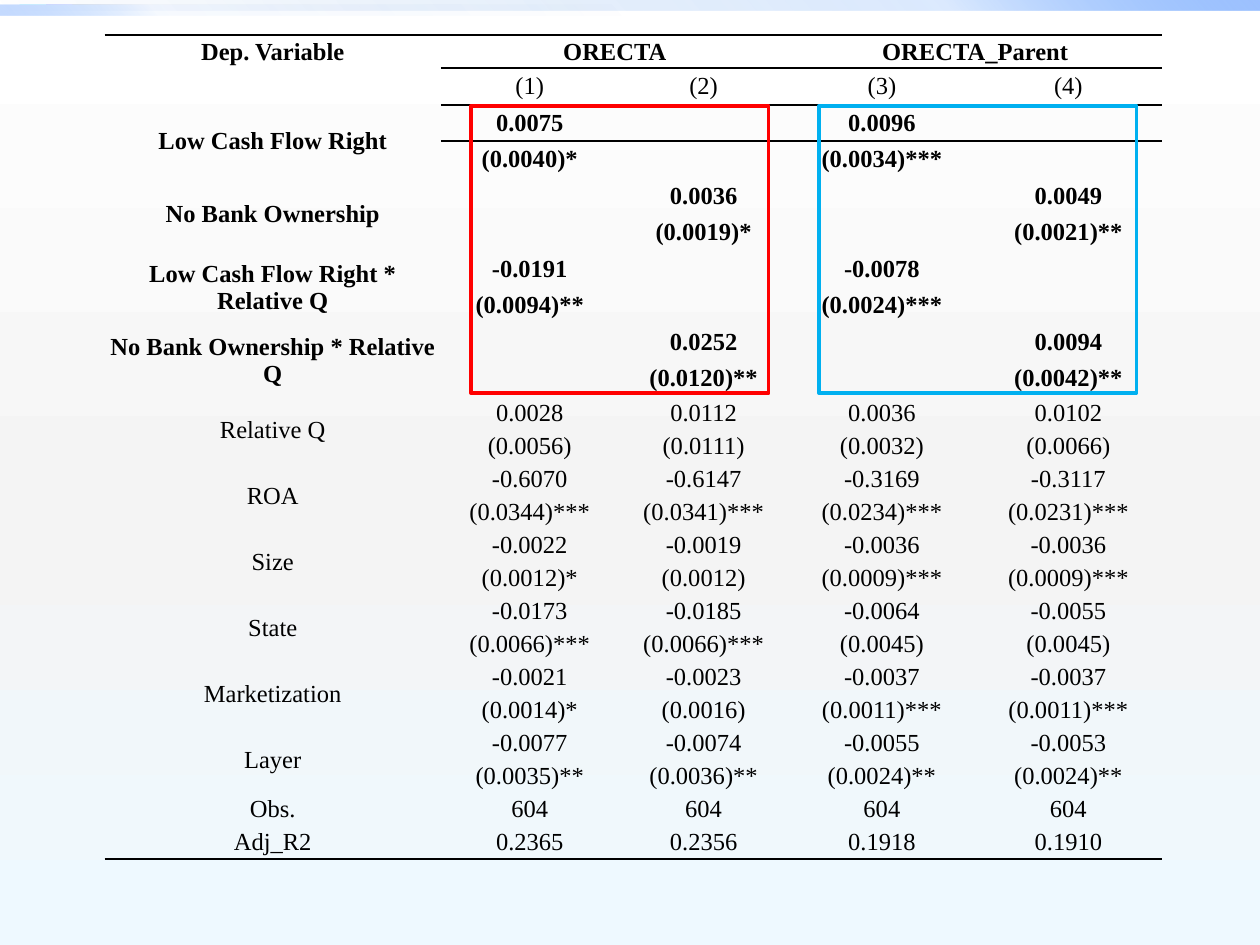
from dataclasses import dataclass

import lxml.etree
import pptx
import pptx.dml.color
import pptx.enum.shapes
import pptx.enum.text
import pptx.oxml.ns
import pptx.slide
import pptx.table
import pptx.util

RGBColor = pptx.dml.color.RGBColor
BLACK = RGBColor(0x00, 0x00, 0x00)
RED = RGBColor(0xFF, 0x00, 0x00)
SKY = RGBColor(0x00, 0xB0, 0xF0)
WHITE = RGBColor(0xFF, 0xFF, 0xFF)
GREY = RGBColor(0xF4, 0xF4, 0xF4)
ICE = RGBColor(0xEE, 0xF9, 0xFF)
DEEP_BLUE = RGBColor(0x00, 0x58, 0xB7)
MID_BLUE = RGBColor(0x4F, 0x95, 0xFF)
PALE_BLUE = RGBColor(0x9E, 0xC2, 0xFF)

FONT = "Times New Roman"
FONT_POINTS = 14
RULE_POINTS = 1.5
FRAME_POINTS = 2.25
NO_STYLE = "{2D5ABB26-0587-4C30-8999-92F81FD0307C}"

# The slide is a grid of 100 columns by 75 rows, ten to the inch.
SLIDE_COLUMNS, SLIDE_ROWS = 100, 75
TABLE_LEFT, TABLE_TOP = 8.3, 2.8
COLUMN_WIDTHS = (26.7, 14.1, 13.5, 14.8, 14.8)
ROW, TALL_ROW = 2.62, 2.9


@dataclass(frozen=True)
class Area:
    left: float
    top: float
    width: float
    height: float


@dataclass(frozen=True)
class Stop:
    percent: int
    color: RGBColor
    opacity: int = 100


@dataclass(frozen=True)
class Effect:
    """One regressor: estimates and standard errors for models (1) to (4)."""
    label: str
    estimates: tuple[str, ...]
    errors: tuple[str, ...]
    bold: bool = False


BACKDROP = (Stop(0, WHITE), Stop(55, GREY), Stop(100, ICE))
BARS = (
    (Area(0, 0, 100, 0.8), 315,
     (Stop(0, DEEP_BLUE, 0), Stop(75, MID_BLUE, 20), Stop(100, PALE_BLUE))),
    (Area(0, 0.4, 50, 0.8), 135,
     (Stop(0, DEEP_BLUE, 0), Stop(75, MID_BLUE, 5), Stop(100, PALE_BLUE, 60))),
)
FRAMES = ((Area(37.4, 8.4, 23.6, 22.8), RED), (Area(65, 8.4, 25.2, 22.8), SKY))

GROUPS = {1: "ORECTA", 3: "ORECTA_Parent"}
MODELS = ("(1)", "(2)", "(3)", "(4)")
EFFECTS = (
    Effect("Low Cash Flow Right", ("0.0075", "", "0.0096", ""),
           ("(0.0040)*", "", "(0.0034)***", ""), True),
    Effect("No Bank Ownership", ("", "0.0036", "", "0.0049"),
           ("", "(0.0019)*", "", "(0.0021)**"), True),
    Effect("Low Cash Flow Right * Relative Q", ("-0.0191", "", "-0.0078", ""),
           ("(0.0094)**", "", "(0.0024)***", ""), True),
    Effect("No Bank Ownership * Relative Q", ("", "0.0252", "", "0.0094"),
           ("", "(0.0120)**", "", "(0.0042)**"), True),
    Effect("Relative Q", ("0.0028", "0.0112", "0.0036", "0.0102"),
           ("(0.0056)", "(0.0111)", "(0.0032)", "(0.0066)")),
    Effect("ROA", ("-0.6070", "-0.6147", "-0.3169", "-0.3117"),
           ("(0.0344)***", "(0.0341)***", "(0.0234)***", "(0.0231)***")),
    Effect("Size", ("-0.0022", "-0.0019", "-0.0036", "-0.0036"),
           ("(0.0012)*", "(0.0012)", "(0.0009)***", "(0.0009)***")),
    Effect("State", ("-0.0173", "-0.0185", "-0.0064", "-0.0055"),
           ("(0.0066)***", "(0.0066)***", "(0.0045)", "(0.0045)")),
    Effect("Marketization", ("-0.0021", "-0.0023", "-0.0037", "-0.0037"),
           ("(0.0014)*", "(0.0016)", "(0.0011)***", "(0.0011)***")),
    Effect("Layer", ("-0.0077", "-0.0074", "-0.0055", "-0.0053"),
           ("(0.0035)**", "(0.0036)**", "(0.0024)**", "(0.0024)**")),
)
SUMMARY = (
    ("Obs.", "604", "604", "604", "604"),
    ("Adj_R2", "0.2365", "0.2356", "0.1918", "0.1910"),
)


def grid(units: float) -> pptx.util.Length:
    return pptx.util.Inches(units / 10)


def child(parent, tag: str, **attributes: str):
    return lxml.etree.SubElement(parent, pptx.oxml.ns.qn(tag), attributes)


def set_gradient(fill, angle: int, stops: tuple[Stop, ...]) -> None:
    """Replace the default two stops, with the angle measured clockwise."""
    fill.gradient()
    gradient = fill._fill._gradFill
    for part in list(gradient):
        gradient.remove(part)
    stop_list = child(gradient, "a:gsLst")
    for stop in stops:
        mark = child(stop_list, "a:gs", pos=str(stop.percent * 1000))
        color = child(mark, "a:srgbClr", val=str(stop.color))
        if stop.opacity < 100:
            child(color, "a:alpha", val=str(stop.opacity * 1000))
    child(gradient, "a:lin", ang=str(angle * 60000), scaled="0")


def add_box(slide: pptx.slide.Slide, area: Area):
    box = slide.shapes.add_shape(
        pptx.enum.shapes.MSO_SHAPE.RECTANGLE,
        grid(area.left), grid(area.top), grid(area.width), grid(area.height))
    box.shadow.inherit = False
    return box


def write_cell(cell, text: str, bold: bool, edges: str) -> None:
    """Fill one cell; edges names its ruled sides, T for top and B for bottom."""
    cell.margin_left = cell.margin_right = grid(0.2)
    cell.margin_top = cell.margin_bottom = 0
    cell.vertical_anchor = pptx.enum.text.MSO_ANCHOR.MIDDLE
    for edge in edges:
        line = child(cell._tc.tcPr, f"a:ln{edge}",
                     w=str(pptx.util.Pt(RULE_POINTS)))
        child(child(line, "a:solidFill"), "a:srgbClr", val=str(BLACK))
    cell.fill.background()
    para = cell.text_frame.paragraphs[0]
    para.alignment = pptx.enum.text.PP_ALIGN.CENTER
    if text:
        span = para.add_run()
        span.text = text
        span.font.name = FONT
        span.font.size = pptx.util.Pt(FONT_POINTS)
        span.font.bold = bold
        span.font.color.rgb = BLACK
    else:
        child(para._p, "a:endParaRPr", sz=str(FONT_POINTS * 100))


def ruled_edges(row: int, column: int, last_row: int) -> str:
    if row == 0:
        return "TB" if column else "T"
    if row == 1:
        return "TB" if column else ""
    if row == 2:
        return "T" if column else ""
    return "B" if row == last_row else ""


def add_regression_table(slide: pptx.slide.Slide) -> None:
    heading = ("Dep. Variable", *(GROUPS.get(column, "") for column in range(1, 5)))
    lines = [(heading, True), (("", *MODELS), False)]
    for effect in EFFECTS:
        lines.append(((effect.label, *effect.estimates), effect.bold))
        lines.append((("", *effect.errors), effect.bold))
    lines += [(values, False) for values in SUMMARY]

    tall_rows = range(1, 2 + 2 * sum(effect.bold for effect in EFFECTS))
    heights = [TALL_ROW if row in tall_rows else ROW for row in range(len(lines))]
    frame = slide.shapes.add_table(
        len(lines), len(COLUMN_WIDTHS), grid(TABLE_LEFT), grid(TABLE_TOP),
        grid(sum(COLUMN_WIDTHS)), grid(sum(heights)))
    table: pptx.table.Table = frame.table
    table.first_row = table.horz_banding = False
    table._tbl.tblPr.find(pptx.oxml.ns.qn("a:tableStyleId")).text = NO_STYLE
    for column, width in zip(table.columns, COLUMN_WIDTHS):
        column.width = grid(width)
    for row, height in zip(table.rows, heights):
        row.height = grid(height)

    for row, (values, bold) in enumerate(lines):
        for column, text in enumerate(values):
            write_cell(table.cell(row, column), text, bold,
                       ruled_edges(row, column, len(lines) - 1))
    for column in GROUPS:
        table.cell(0, column).merge(table.cell(0, column + 1))
    for row in range(2, 2 + 2 * len(EFFECTS), 2):
        table.cell(row, 0).merge(table.cell(row + 1, 0))


def main() -> None:
    deck = pptx.Presentation()
    deck.slide_width, deck.slide_height = grid(SLIDE_COLUMNS), grid(SLIDE_ROWS)
    slide = deck.slides.add_slide(deck.slide_layouts[6])
    set_gradient(slide.background.fill, 90, BACKDROP)
    for area, angle, stops in BARS:
        bar = add_box(slide, area)
        set_gradient(bar.fill, angle, stops)
        bar.line.fill.background()
    add_regression_table(slide)
    for area, color in FRAMES:
        frame = add_box(slide, area)
        frame.fill.background()
        frame.line.color.rgb = color
        frame.line.width = pptx.util.Pt(FRAME_POINTS)
    deck.save("out.pptx")


if __name__ == "__main__":
    main()
